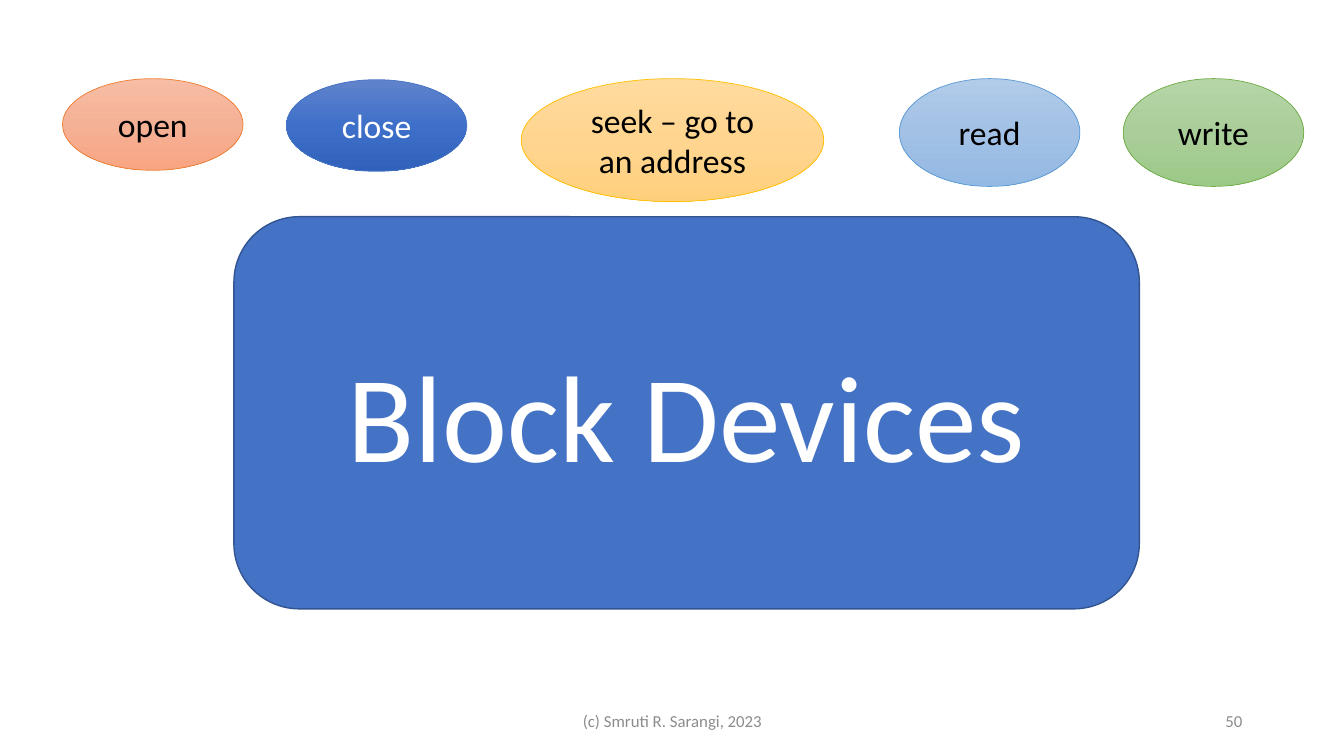
import copy
from dataclasses import dataclass

import pptx
import pptx.dml.color
import pptx.enum.shapes
import pptx.enum.text
import pptx.oxml.ns
import pptx.util

PX = 9144  # EMU per px, 100 px to the inch
FONT = "Calibri"
SHAPES = pptx.enum.shapes.MSO_SHAPE
ALIGN = pptx.enum.text.PP_ALIGN


@dataclass
class Block:
    text: str
    left: int
    top: int
    width: int
    height: int
    size: int
    ink: str
    align: ALIGN = ALIGN.CENTER


@dataclass
class Operation(Block):
    line: str = ""
    shades: tuple[str, ...] = ()


FOOTERS = [
    Block("(c) Smruti R. Sarangi, 2023", 442, 695, 450, 40, 12, "8C8C8C"),
    Block("50", 942, 695, 300, 40, 12, "8C8C8C", ALIGN.RIGHT),
]
DEVICES = Block("Block Devices", 232, 215, 898, 389, 88, "FFFFFF")
OPERATIONS = [
    Operation("open", 62, 78, 179, 91, 24, "000000",
              line="ED7D31", shades=("F7BDA5", "F5B196", "F8A582")),
    Operation("close", 284, 79, 179, 91, 24, "FFFFFF",
              line="4472C4", shades=("6183CB", "3E70CA", "3062BB")),
    Operation("seek – go to an address", 517, 78, 300, 122, 24, "000000",
              line="FFC000", shades=("FFDB9E", "FFD590", "FFD07C")),
    Operation("read", 892, 78, 179, 107, 24, "000000",
              line="5B9BD5", shades=("B1CBE9", "A3C1E5", "93B9E4")),
    Operation("write", 1114, 78, 179, 107, 24, "000000",
              line="70AD47", shades=("B5D5A7", "AACE9A", "9CC987")),
]


def color(code: str) -> pptx.dml.color.RGBColor:
    return pptx.dml.color.RGBColor.from_string(code)


def frame(block: Block) -> list[int]:
    return [px * PX for px in (block.left, block.top, block.width, block.height)]


def write(shape, block: Block) -> None:
    text_frame = shape.text_frame
    text_frame.word_wrap = True
    text_frame.vertical_anchor = pptx.enum.text.MSO_ANCHOR.MIDDLE
    text_frame.text = block.text
    para = text_frame.paragraphs[0]
    para.alignment = block.align
    font = para.runs[0].font
    font.name = FONT
    font.size = pptx.util.Pt(block.size)
    font.color.rgb = color(block.ink)


def add_outlined(page, kind: SHAPES, block: Block, line: str, weight: float):
    shape = page.shapes.add_shape(kind, *frame(block))
    shape.shadow.inherit = False
    shape.line.color.rgb = color(line)
    shape.line.width = pptx.util.Pt(weight)
    write(shape, block)
    return shape


def shade(shape, shades: tuple[str, ...]) -> None:
    """Fill from top to bottom with evenly spaced colours."""
    shape.fill.gradient()
    shape.fill.gradient_angle = 270
    stop_list = shape.element.spPr.find(".//" + pptx.oxml.ns.qn("a:gsLst"))
    while len(stop_list) < len(shades):
        stop_list.append(copy.deepcopy(stop_list[0]))
    for index, (stop, code) in enumerate(zip(shape.fill.gradient_stops, shades)):
        stop.position = index / (len(shades) - 1)
        stop.color.rgb = color(code)


def main() -> None:
    deck = pptx.Presentation()
    deck.slide_width, deck.slide_height = 1333 * PX, 750 * PX
    page = deck.slides.add_slide(deck.slide_layouts[6])

    # Footer and page number
    for footer in FOOTERS:
        write(page.shapes.add_textbox(*frame(footer)), footer)

    # Device panel
    panel = add_outlined(page, SHAPES.ROUNDED_RECTANGLE, DEVICES, "325491", 1)
    panel.fill.solid()
    panel.fill.fore_color.rgb = color("4472C4")

    # Operations
    for operation in OPERATIONS:
        ellipse = add_outlined(page, SHAPES.OVAL, operation, operation.line, 0.5)
        shade(ellipse, operation.shades)

    deck.save("out.pptx")


if __name__ == "__main__":
    main()
